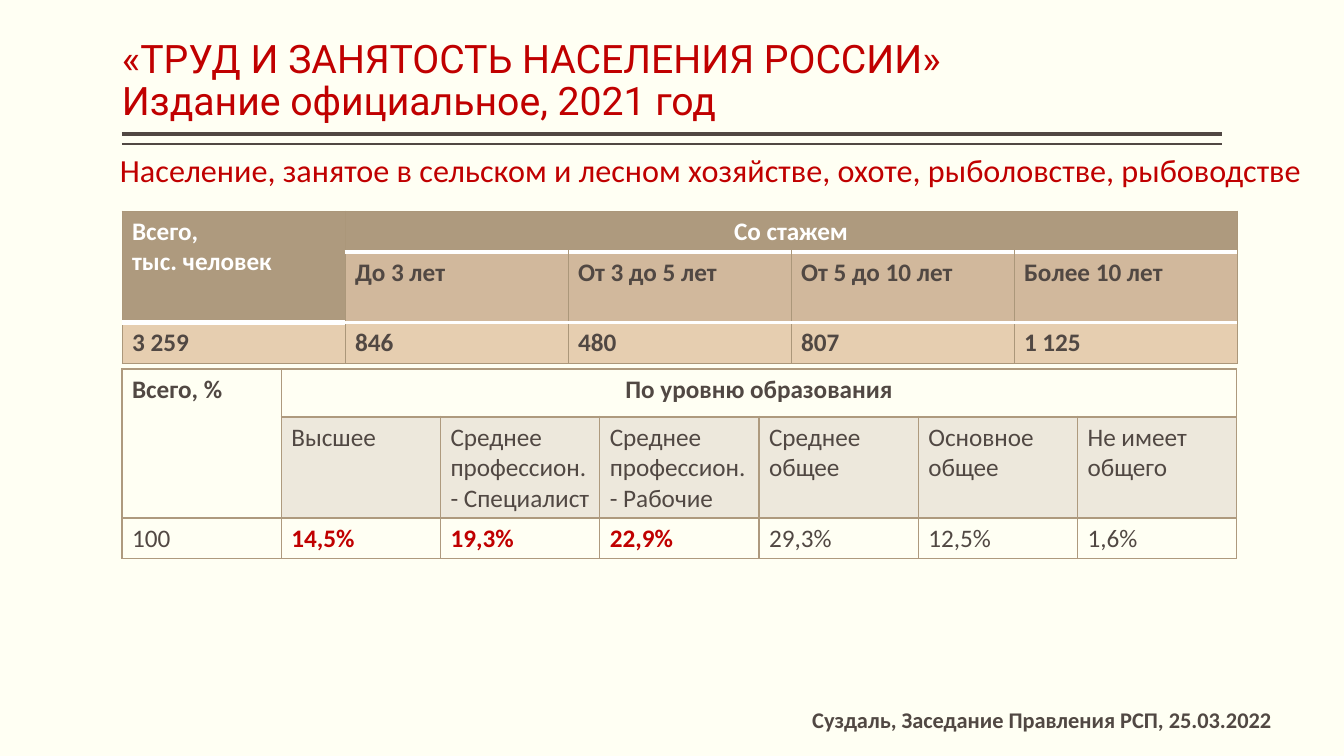
from dataclasses import dataclass

from lxml import etree
from pptx import Presentation
from pptx.dml.color import RGBColor
from pptx.enum.shapes import MSO_CONNECTOR
from pptx.enum.text import MSO_ANCHOR, MSO_AUTO_SIZE, PP_ALIGN
from pptx.oxml.ns import qn
from pptx.util import Emu, Pt

LEFT, CENTER = PP_ALIGN.LEFT, PP_ALIGN.CENTER
BOTTOM, TOP = MSO_ANCHOR.BOTTOM, MSO_ANCHOR.TOP
STRAIGHT, FIXED = MSO_CONNECTOR.STRAIGHT, MSO_AUTO_SIZE.NONE
SCALE = 914400 / 100.8  # EMU in one px
TITLE_ONLY = 5


@dataclass(frozen=True)
class Theme:
    paper: str = "FFFFF3"
    ink: str = "514843"
    red: str = "C00000"
    white: str = "FFFFFF"
    edge: str = "AB977A"
    tan: str = "AE9A7E"
    rose: str = "D1B89C"
    sand: str = "E6CEB0"
    pale: str = "EDE8DC"
    head: str = "Roboto"
    body: str = "Calibri"
    title: int = 28
    lead: int = 23
    cell: int = 18
    note: int = 16


def px(n):
    return Emu(round(n * SCALE))


def rgb(code):
    return RGBColor.from_string(code)


def put(frame, text, font, size, color, bold=False, align=LEFT, space=None):
    """Fill a text frame; a newline starts a paragraph, \\v breaks a line."""
    frame.text = text
    for para in frame.paragraphs:
        para.alignment = align
        if space:
            para.line_spacing = space
        for run in para.runs:
            run.font.name = font
            run.font.size = Pt(size)
            run.font.bold = bold
            run.font.color.rgb = rgb(color)


def rim(cell, **sides):
    """Draw cell borders; each side is a (colour, points) pair."""
    props = cell._tc.get_or_add_tcPr()
    for side, (color, width) in sides.items():
        line = etree.SubElement(props, qn("a:ln" + side), w=str(Pt(width)))
        fill = etree.SubElement(line, qn("a:solidFill"))
        etree.SubElement(fill, qn("a:srgbClr"), val=color)


class Deck:
    def __init__(self, theme):
        self.theme = theme
        self.show = Presentation()
        self.show.slide_width, self.show.slide_height = px(1344), px(756)
        self.slide = self.show.slides.add_slide(
            self.show.slide_layouts[TITLE_ONLY])
        back = self.slide.background.fill
        back.solid()
        back.fore_color.rgb = rgb(theme.paper)

    def title(self, x, y, w, h, text):
        box = self.slide.shapes.title
        box.left, box.top, box.width, box.height = map(px, (x, y, w, h))
        frame = box.text_frame
        frame.auto_size, frame.word_wrap = FIXED, True
        frame.vertical_anchor = BOTTOM
        frame.margin_left = frame.margin_right = 0
        frame.margin_top = frame.margin_bottom = px(5)
        put(frame, text, self.theme.head, self.theme.title, self.theme.red,
            space=0.9)

    def text(self, x, y, w, h, text, **form):
        box = self.slide.shapes.add_textbox(*map(px, (x, y, w, h)))
        box.text_frame.word_wrap = True
        put(box.text_frame, text, self.theme.body, **form)

    def rule(self, x, y, w, width):
        line = self.slide.shapes.add_connector(
            STRAIGHT, px(x), px(y), px(x + w), px(y))
        line.line.color.rgb = rgb(self.theme.ink)
        line.line.width = Pt(width)
        etree.SubElement(line._element.spPr, qn("a:effectLst"))

    def table(self, x, y, w, highs, rows, looks, side, rules, hot=()):
        """looks: (fill, colour, bold) by row; rules: row edges, top down;
        hot: columns stressed in the last row."""
        theme, count, last = self.theme, len(rows[-1]), len(rows) - 1
        grid = self.slide.shapes.add_table(
            len(rows), count, *map(px, (x, y, w, sum(highs)))).table
        grid.first_row = grid.horz_banding = False
        for col in grid.columns:
            col.width = px(w / count)
        for row, high in zip(grid.rows, highs):
            row.height = px(high)

        # First column spans both header rows, the group name the rest
        grid.cell(0, 0).merge(grid.cell(1, 0))
        grid.cell(0, 1).merge(grid.cell(0, count - 1))

        for r in range(len(rows)):
            for c in range(count):
                cell = grid.cell(r, c)
                fill, color, bold = looks[0 if c == 0 and r < 2 else r]
                edges = list(rules)
                if c == 0:
                    edges[2] = rules[1]
                rim(cell, L=side, R=side, T=edges[r], B=edges[r + 1])
                if fill:
                    cell.fill.solid()
                    cell.fill.fore_color.rgb = rgb(fill)
                else:
                    cell.fill.background()
                cell.vertical_anchor = TOP
                if cell.is_spanned:
                    continue
                if r == last and c in hot:
                    color, bold = theme.red, True
                put(cell.text_frame, rows[r][c], theme.body, theme.cell,
                    color, bold=bold,
                    align=CENTER if (r, c) == (0, 1) else LEFT)

    def save(self):
        self.show.save("out.pptx")


def main():
    theme = Theme()
    deck = Deck(theme)

    # Heading with its double rule
    deck.title(122, 8, 1101, 121,
               "«ТРУД И ЗАНЯТОСТЬ НАСЕЛЕНИЯ РОССИИ»\v"
               "Издание официальное, 2021 год")
    deck.rule(122, 134, 1100, 3)
    deck.rule(122, 144, 1100, 1)
    deck.text(110, 145, 1211, 49,
              "Население, занятое в сельском и лесном хозяйстве, охоте, "
              "рыболовстве, рыбоводстве", size=theme.lead, color=theme.red)

    # Workers by length of service
    thin = (theme.edge, 0.5)
    deck.table(
        122, 211, 1115, (41, 70, 41),
        [["Всего,\nтыс. человек", "Со стажем"],
         ["", "До 3 лет", "От 3 до 5 лет", "От 5 до 10 лет", "Более 10 лет"],
         ["3 259", "846", "480", "807", "1 125"]],
        looks=[(theme.tan, theme.white, True),
               (theme.rose, theme.ink, True),
               (theme.sand, theme.ink, True)],
        side=thin,
        rules=[thin, (theme.white, 3.78), (theme.white, 2.25), thin])

    # Workers by education
    line = (theme.tan, 1)
    deck.table(
        122, 369, 1115, (48, 101, 40),
        [["Всего, %", "По уровню образования"],
         ["", "Высшее", "Среднее профессион. - Специалист",
          "Среднее профессион. - Рабочие", "Среднее общее",
          "Основное общее", "Не имеет общего"],
         ["100", "14,5%", "19,3%", "22,9%", "29,3%", "12,5%", "1,6%"]],
        looks=[(None, theme.ink, True),
               (theme.pale, theme.ink, False),
               (None, theme.ink, False)],
        side=line,
        rules=[line, (theme.tan, 2), line, line],
        hot=(1, 2, 3))

    # Place and date
    deck.text(740, 701, 604, 37,
              "Суздаль, Заседание Правления РСП, 25.03.2022",
              size=theme.note, color=theme.ink, bold=True, align=CENTER)
    deck.save()


if __name__ == "__main__":
    main()
